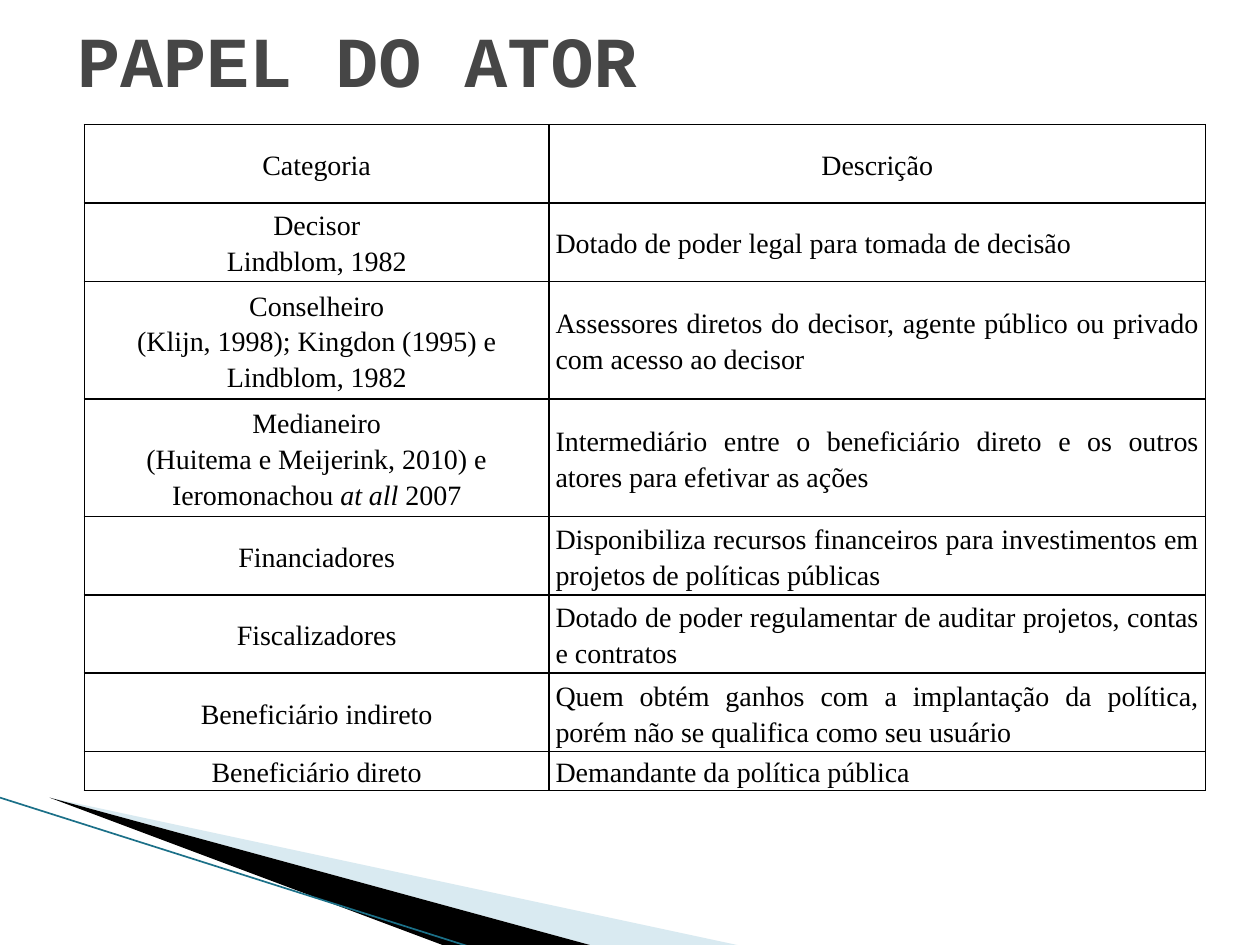
import dataclasses

import pptx
import pptx.dml.color
import pptx.enum.shapes
import pptx.enum.text
import pptx.oxml
import pptx.oxml.ns
import pptx.util

Cm = pptx.util.Cm
Pt = pptx.util.Pt
ALIGN = pptx.enum.text.PP_ALIGN
MIDDLE = pptx.enum.text.MSO_ANCHOR.MIDDLE
NS = pptx.oxml.ns.nsdecls("a")


@dataclasses.dataclass(frozen=True)
class Theme:
    """Colours, fonts and type sizes of the slide."""
    ink: str = "000000"
    head: str = "464646"
    pale: str = "A0CBDC"
    edge: str = "1B7088"
    mono: str = "Courier New"
    serif: str = "Times New Roman"
    big: int = 41
    text: int = 16


THEME = Theme()
UNIT = 0.79
ROWS = [
    (2, "Categoria", "Descrição"),
    (2, "Decisor\nLindblom, 1982", "Dotado de poder legal para tomada de decisão"),
    (3, "Conselheiro\n(Klijn, 1998); Kingdon (1995) e Lindblom, 1982",
     "Assessores diretos do decisor, agente público ou privado com acesso ao decisor"),
    (3, "Medianeiro\n(Huitema e Meijerink, 2010) e Ieromonachou *at all* 2007",
     "Intermediário entre o beneficiário direto e os outros atores para efetivar as ações"),
    (2, "Financiadores",
     "Disponibiliza recursos financeiros para investimentos em projetos de políticas públicas"),
    (2, "Fiscalizadores",
     "Dotado de poder regulamentar de auditar projetos, contas e contratos"),
    (2, "Beneficiário indireto",
     "Quem obtém ganhos com a implantação da política, porém não se qualifica como seu usuário"),
    (1, "Beneficiário direto", "Demandante da política pública"),
]


def color(code):
    """Turn a hex code into a colour."""
    return pptx.dml.color.RGBColor.from_string(code)


def style(font, face, size, code):
    """Set the face, size and colour of a font."""
    font.name, font.size = face, Pt(size)
    font.color.rgb = color(code)


def add_title(slide, left, top, width, height):
    """Place the title in its box."""
    title = slide.shapes.title
    title.left, title.top = Cm(left), Cm(top)
    title.width, title.height = Cm(width), Cm(height)
    frame = title.text_frame
    frame.text = "PAPEL DO ATOR"
    frame.vertical_anchor = MIDDLE
    line = frame.paragraphs[0]
    line.alignment = ALIGN.LEFT
    font = line.runs[0].font
    style(font, THEME.mono, THEME.big, THEME.head)
    font.bold = True


def add_border(cell):
    """Draw a thin line on all four sides of a cell."""
    props = cell._tc.get_or_add_tcPr()
    for side in "LRTB":
        props.append(pptx.oxml.parse_xml(
            f'<a:ln{side} {NS} w="12700"><a:solidFill>'
            f'<a:srgbClr val="{THEME.ink}"/></a:solidFill></a:ln{side}>'))


def fill_cell(cell, text, align):
    """Write the text of a cell, with starred parts in italics."""
    add_border(cell)
    cell.fill.background()
    cell.vertical_anchor = MIDDLE
    cell.margin_left = cell.margin_right = Cm(0.13)
    cell.margin_top = cell.margin_bottom = 0
    cell.text_frame.text = text.replace("*", "")
    for line, words in zip(cell.text_frame.paragraphs, text.split("\n")):
        line.alignment, line.line_spacing = align, 1.15
        parts = words.split("*")
        line.runs[0].text = parts[0]
        for part in parts[1:]:
            line.add_run().text = part
        for index, run in enumerate(line.runs):
            style(run.font, THEME.serif, THEME.text, THEME.ink)
            run.font.italic = index % 2 == 1


def add_roles(slide, left, top, width):
    """Place the table of roles, with row heights in text lines."""
    tall = UNIT * sum(row[0] for row in ROWS)
    table = slide.shapes.add_table(
        len(ROWS), 2, Cm(left), Cm(top), Cm(width), Cm(tall)).table
    table.first_row = table.horz_banding = False
    first = 9.37
    table.columns[0].width = Cm(first)
    table.columns[1].width = Cm(width - first)
    for index, (lines, role, note) in enumerate(ROWS):
        table.rows[index].height = Cm(UNIT * lines)
        fill_cell(table.cell(index, 0), role, ALIGN.CENTER)
        fill_cell(table.cell(index, 1), note,
                  ALIGN.JUSTIFY if index else ALIGN.CENTER)


def add_wedge(slide, left, top, points, code):
    """Draw a filled outline from points given in centimetres."""
    build = slide.shapes.build_freeform(*points[0], scale=Cm(1))
    build.add_line_segments(points[1:], close=True)
    shape = build.convert_to_shape(Cm(left), Cm(top))
    shape.shadow.inherit = False
    shape.fill.solid()
    shape.fill.fore_color.rgb = color(code)
    shape.line.fill.background()
    return shape


def add_corner(slide, left, top, width, height):
    """Place the wedges and the line in the lower corner."""
    pale = add_wedge(slide, left, top, [
        (1.4, 0.45), (width, height), (11.58, height), (1.4, 0.43)], THEME.pale)
    tint = pale.fill._xPr.find(".//" + pptx.oxml.ns.qn("a:srgbClr"))
    tint.append(pptx.oxml.parse_xml(f'<a:alpha {NS} val="40000"/>'))
    add_wedge(slide, left, top, [
        (1.35, 0.4), (11.61, height), (9.45, height), (1.37, 0.43)], THEME.ink)
    line = slide.shapes.add_connector(
        pptx.enum.shapes.MSO_CONNECTOR.STRAIGHT,
        Cm(left), Cm(top), Cm(left + 9.45), Cm(top + height))
    line.line.color.rgb = color(THEME.edge)
    line.line.width = Pt(0.95)
    line._element.spPr.append(pptx.oxml.parse_xml(f"<a:effectLst {NS}/>"))


def main():
    """Build and save the slide."""
    deck = pptx.Presentation()
    deck.slide_width, deck.slide_height = Cm(25.4), Cm(19.05)
    slide = deck.slides.add_slide(deck.slide_layouts[5])
    add_corner(slide, 0, 16.08, 15.1, 3)
    add_title(slide, 1.3, 0, 22.86, 2.36)
    add_roles(slide, 1.7, 2.51, 22.6)
    deck.save("out.pptx")


if __name__ == "__main__":
    main()
